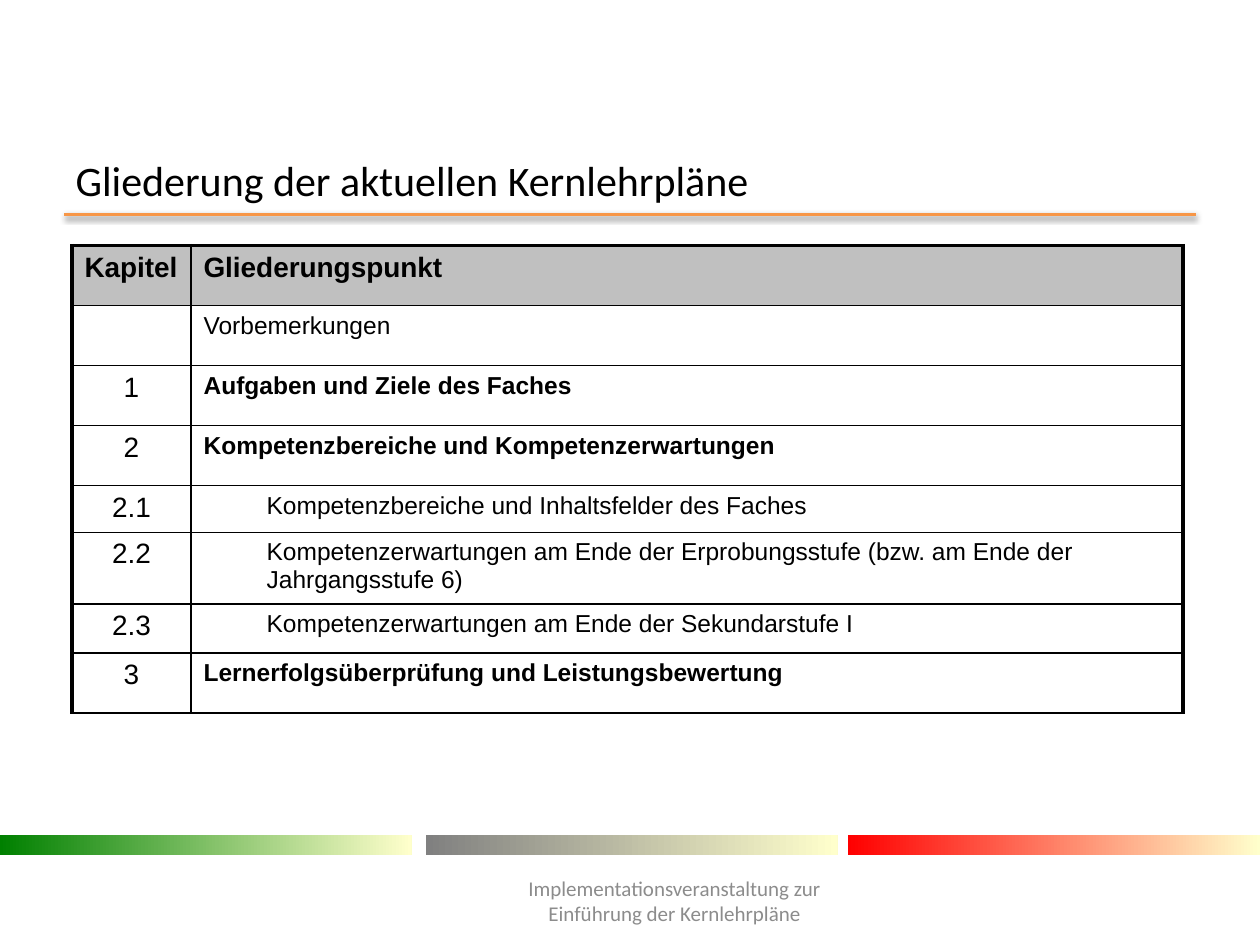
from pptx import Presentation
from pptx.dml.color import RGBColor
from pptx.enum.shapes import MSO_CONNECTOR, MSO_SHAPE
from pptx.enum.text import MSO_ANCHOR, PP_ALIGN
from pptx.oxml import parse_xml
from pptx.oxml.ns import nsdecls
from pptx.util import Cm, Pt

LEFT, CENTER = PP_ALIGN.LEFT, PP_ALIGN.CENTER
MIDDLE = MSO_ANCHOR.MIDDLE
RECTANGLE = MSO_SHAPE.RECTANGLE
STRAIGHT = MSO_CONNECTOR.STRAIGHT
THIN, THICK = Pt(1), Pt(2.25)

# Chapter, heading, heading is bold, outline level, row height in cm
ROWS = [
    ("Kapitel", "Gliederungspunkt", True, 0, 1.21),
    ("", "Vorbemerkungen", False, 0, 1.21),
    ("1", "Aufgaben und Ziele des Faches", True, 0, 1.21),
    ("2", "Kompetenzbereiche und Kompetenzerwartungen", True, 0, 1.21),
    ("2.1", "Kompetenzbereiche und Inhaltsfelder des Faches", False, 1, 0.94),
    ("2.2", "Kompetenzerwartungen am Ende der Erprobungsstufe "
            "(bzw. am Ende der Jahrgangsstufe 6)", False, 1, 1.14),
    ("2.3", "Kompetenzerwartungen am Ende der Sekundarstufe I", False, 1, 0.99),
    ("3", "Lernerfolgsüberprüfung und Leistungsbewertung", True, 0, 1.21),
]


def color(hex_value):
    return RGBColor.from_string(hex_value)


def format_text(paragraph, font_name, size, hex_value, alignment, bold=False):
    paragraph.alignment = alignment
    font = paragraph.font
    font.name, font.size, font.bold = font_name, Pt(size), bold
    font.color.rgb = color(hex_value)


deck = Presentation()
deck.slide_width, deck.slide_height = Cm(25.4), Cm(19.05)
page = deck.slides.add_slide(deck.slide_layouts[5])

# Rule under the title, with a soft shadow below it
rule = page.shapes.add_connector(STRAIGHT, Cm(1.3), Cm(4.32), Cm(24.1), Cm(4.32))
rule.line.color.rgb = color("F79646")
rule.line.width = Pt(2)
rule._element.spPr.append(parse_xml(
    f'<a:effectLst {nsdecls("a")}>'
    '<a:outerShdw blurRad="40000" dist="20000" dir="5400000" rotWithShape="0">'
    '<a:srgbClr val="000000"><a:alpha val="38000"/></a:srgbClr>'
    '</a:outerShdw></a:effectLst>'))

# Colour bars above the footer
for left, start in [(0, "008000"), (8.59, "808080"), (17.1, "FF0000")]:
    bar = page.shapes.add_shape(RECTANGLE, Cm(left), Cm(16.83), Cm(8.3), Cm(0.41))
    bar.shadow.inherit = False
    bar.line.fill.background()
    bar.fill.gradient()
    bar.fill.gradient_angle = 0
    for stop, hex_value in zip(bar.fill.gradient_stops, (start, "FFFFCC")):
        stop.color.rgb = color(hex_value)

title = page.shapes.title
title.left, title.top, title.width, title.height = Cm(1.27), Cm(3.12), Cm(22.86), Cm(1)
title.text_frame.text = "Gliederung der aktuellen Kernlehrpläne"
title.text_frame.vertical_anchor = MIDDLE
format_text(title.text_frame.paragraphs[0], "Calibri", 24, "000000", LEFT)

footer = page.shapes.add_textbox(Cm(9.5), Cm(17.65), Cm(8.2), Cm(1.02)).text_frame
footer.word_wrap = True
footer.vertical_anchor = MIDDLE
footer.text = "Implementationsveranstaltung zur Einführung der Kernlehrpläne"
format_text(footer.paragraphs[0], "Calibri", 12, "8C8C8C", CENTER)

# Outline of the curriculum
outline = page.shapes.add_table(len(ROWS), 2, Cm(1.45), Cm(4.95), Cm(22.4), Cm(9.12)).table
outline.columns[0].width, outline.columns[1].width = Cm(2.4), Cm(20)

for row_index, (chapter, heading, heading_bold, level, height) in enumerate(ROWS):
    outline.rows[row_index].height = Cm(height)
    is_header = row_index == 0
    for column_index, text in enumerate((chapter, heading)):
        cell = outline.cell(row_index, column_index)
        is_heading = column_index == 1
        cell.text = text
        para = cell.text_frame.paragraphs[0]
        if is_heading and level:
            para.level = level
            properties = para._p.get_or_add_pPr()
            properties.set("marL", str(Cm(1.27)))
            properties.set("indent", "0")
        format_text(para, "Arial", 14 if is_heading and not is_header else 16, "000000",
                    LEFT if is_heading or is_header else CENTER,
                    heading_bold if is_heading else is_header)

        borders = {"lnL": THIN if is_heading else THICK,
                   "lnR": THICK if is_heading else THIN,
                   "lnT": THICK if is_header else THIN,
                   "lnB": THIN}
        for side, width in borders.items():
            cell._tc.get_or_add_tcPr().append(parse_xml(
                f'<a:{side} {nsdecls("a")} w="{width}"><a:solidFill>'
                f'<a:srgbClr val="000000"/></a:solidFill></a:{side}>'))
        if is_header:
            cell.fill.solid()
            cell.fill.fore_color.rgb = color("C0C0C0")
        else:
            cell.fill.background()

deck.save("out.pptx")
